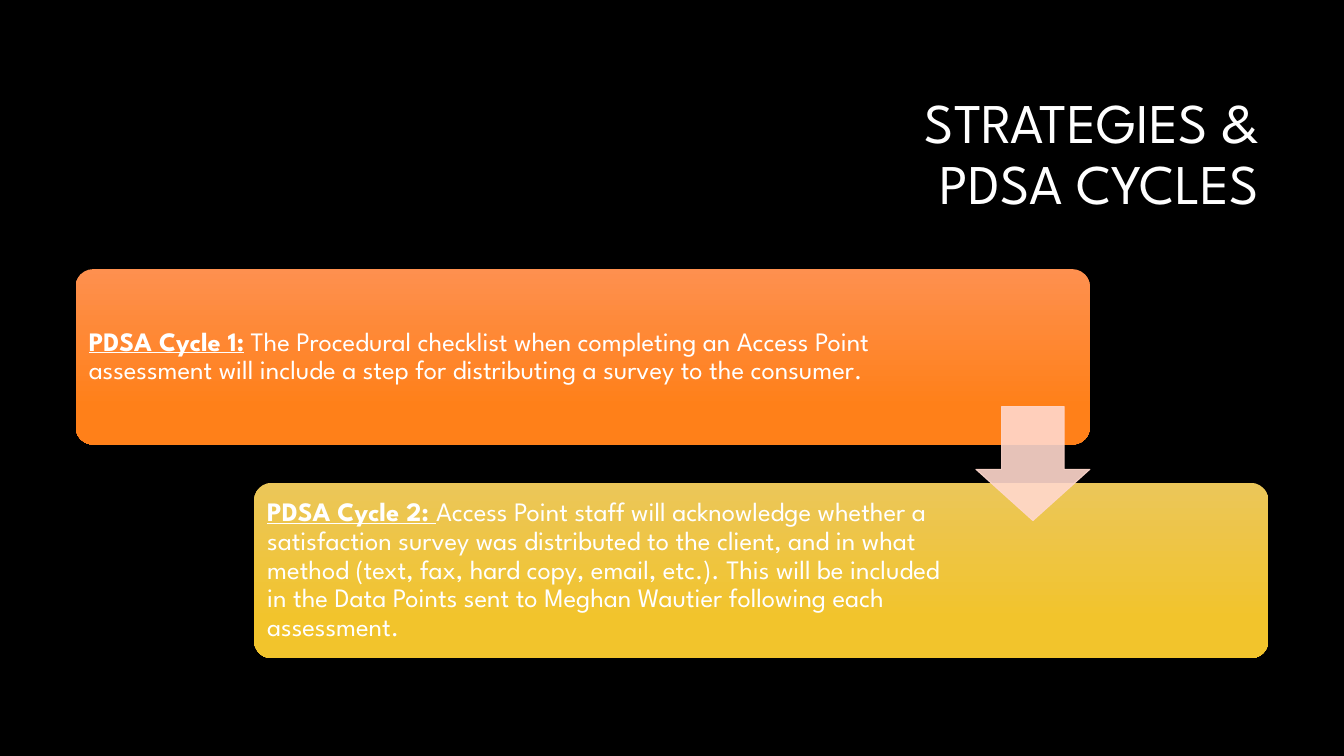
from lxml import etree
from pptx import Presentation
from pptx.dml.color import RGBColor
from pptx.enum.shapes import MSO_SHAPE
from pptx.enum.text import MSO_ANCHOR, MSO_AUTO_SIZE, PP_ALIGN
from pptx.oxml.ns import qn
from pptx.util import Inches, Pt

ROUNDED, DOWN_ARROW = MSO_SHAPE.ROUNDED_RECTANGLE, MSO_SHAPE.DOWN_ARROW
MIDDLE, NO_FIT = MSO_ANCHOR.MIDDLE, MSO_AUTO_SIZE.NONE
LEFT, RIGHT = PP_ALIGN.LEFT, PP_ALIGN.RIGHT

FONT = "League Spartan"
COLORS = {
    "background": "000000",
    "text": "FFFFFF",
    "orange": ("FE904F", "FF8019"),
    "yellow": ("EBC659", "F2C42C"),
    "arrow": "FFD8CD",
}

# Staircase grid, in inches: each card is one step right and down
CARD_X, CARD_Y, CARD_W, CARD_H = 0.75, 2.67, 10.06, 1.74
STEP_X, STEP_Y = 1.77, 2.12
ARROW = 1.13
INSET = 0.08

# Heading, text, gradient, right margin of the text
CYCLES = [
    ("PDSA Cycle 1:",
     " The Procedural checklist when completing an Access Point assessment "
     "will include a step for distributing a survey to the consumer.",
     "orange", 1.78),
    ("PDSA Cycle 2: ",
     "Access Point staff will acknowledge whether a satisfaction survey was "
     "distributed to the client, and in what method (text, fax, hard copy, "
     "email, etc.). This will be included in the Data Points sent to Meghan "
     "Wautier following each assessment.",
     "yellow", 2.99),
]


def rgb(value):
    return RGBColor.from_string(value)


def format_paragraph(p, size, align):
    p.alignment = align
    p.line_spacing = 0.9
    p.font.name = FONT
    p.font.size = Pt(size)
    p.font.color.rgb = rgb(COLORS["text"])


def add_title(s, text):
    title = s.shapes.title
    title.left, title.top = Inches(3.17), Inches(0.84)
    title.width, title.height = Inches(9.42), Inches(1.41)
    tf = title.text_frame
    tf.text = text
    tf.auto_size = NO_FIT
    tf.vertical_anchor = MIDDLE
    format_paragraph(tf.paragraphs[0], 40, RIGHT)


def add_shape(s, kind, x, y, w, h, adjustments):
    sp = s.shapes.add_shape(kind, Inches(x), Inches(y), Inches(w), Inches(h))
    sp.shadow.inherit = False
    for i, value in enumerate(adjustments):
        sp.adjustments[i] = value
    return sp


def add_card(s, step, heading, text, color, margin_right):
    sp = add_shape(s, ROUNDED, CARD_X + step * STEP_X, CARD_Y + step * STEP_Y,
                   CARD_W, CARD_H, [0.1])
    sp.line.fill.background()
    sp.fill.gradient()
    sp.fill.gradient_angle = 270
    stops = sp.fill.gradient_stops
    for stop, position, value in zip(stops, (0, 0.78), COLORS[color]):
        stop.position = position
        stop.color.rgb = rgb(value)

    tf = sp.text_frame
    tf.word_wrap = True
    tf.vertical_anchor = MIDDLE
    tf.margin_left = tf.margin_top = tf.margin_bottom = Inches(INSET)
    tf.margin_right = Inches(margin_right)
    p = tf.paragraphs[0]
    format_paragraph(p, 19, LEFT)
    r = p.add_run()
    r.text = heading
    r.font.bold = r.font.underline = True
    p.add_run().text = text


def add_arrow(s):
    # Right edge on the first card, centred on the gap between the cards
    x = CARD_X + CARD_W - ARROW
    y = CARD_Y + (CARD_H + STEP_Y - ARROW) / 2
    sp = add_shape(s, DOWN_ARROW, x, y, ARROW, ARROW, [0.55, 0.45])
    sp.fill.solid()
    sp.fill.fore_color.rgb = rgb(COLORS["arrow"])
    sp.line.color.rgb = rgb(COLORS["arrow"])
    sp.line.width = Pt(0.75)
    # Let the cards show through the fill and the outline
    for color in sp.element.spPr.iter(qn("a:srgbClr")):
        etree.SubElement(color, qn("a:alpha"), val="90000")


def main():
    prs = Presentation()
    prs.slide_width, prs.slide_height = Inches(13.33), Inches(7.5)
    s = prs.slides.add_slide(prs.slide_layouts[5])
    s.background.fill.solid()
    s.background.fill.fore_color.rgb = rgb(COLORS["background"])

    add_title(s, "STRATEGIES &\vPDSA CYCLES")
    for step, cycle in enumerate(CYCLES):
        add_card(s, step, *cycle)
    add_arrow(s)
    prs.save("out.pptx")


if __name__ == "__main__":
    main()
